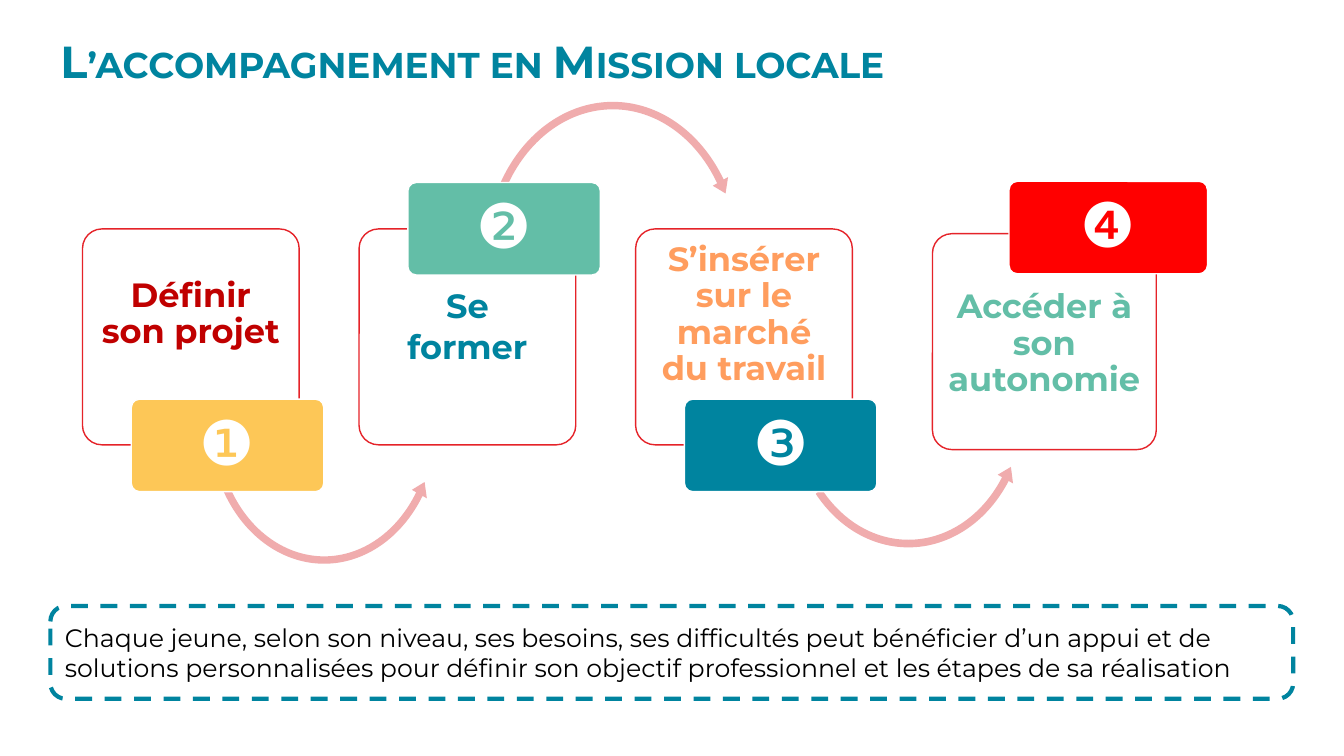
from dataclasses import dataclass

from pptx import Presentation
from pptx.dml.color import RGBColor
from pptx.enum.dml import MSO_LINE
from pptx.enum.shapes import MSO_SHAPE
from pptx.enum.text import MSO_ANCHOR, MSO_AUTO_SIZE, PP_ALIGN
from pptx.shapes.autoshape import Shape
from pptx.slide import Slide
from pptx.util import Cm, Pt

ROUNDED = MSO_SHAPE.ROUNDED_RECTANGLE
ARC_OVER = MSO_SHAPE.CIRCULAR_ARROW
ARC_UNDER = MSO_SHAPE.LEFT_CIRCULAR_ARROW
TOP, MIDDLE, BOTTOM = MSO_ANCHOR.TOP, MSO_ANCHOR.MIDDLE, MSO_ANCHOR.BOTTOM
LEFT, CENTER = PP_ALIGN.LEFT, PP_ALIGN.CENTER
DASH = MSO_LINE.DASH
NO_AUTOFIT = MSO_AUTO_SIZE.NONE

FONT = "Montserrat"
WHITE = RGBColor(0xFF, 0xFF, 0xFF)
BLACK = RGBColor(0x00, 0x00, 0x00)
TEAL = RGBColor(0x00, 0x84, 0x9F)
GREEN = RGBColor(0x63, 0xBE, 0xA7)
YELLOW = RGBColor(0xFD, 0xC7, 0x57)
ORANGE = RGBColor(0xFF, 0x9D, 0x5E)
RED = RGBColor(0xFF, 0x00, 0x00)
DARK_RED = RGBColor(0xC0, 0x00, 0x00)
CARD_BORDER = RGBColor(0xE5, 0x23, 0x29)
PINK = RGBColor(0xF0, 0xAC, 0xAD)

CARD_LEFT, CARD_TOP, CARD_STEP = 2.08, 5.77, 6.97
CARD_W, CARD_H = 5.46, 5.44
TILE_W, TILE_H, TILE_DX = 4.85, 2.33, 1.23
TILE_LOW, TILE_HIGH = 4.29, -1.17
CORNER = 0.09


@dataclass(frozen=True)
class Box:
    left: float
    top: float
    width: float
    height: float


@dataclass(frozen=True)
class Arc:
    kind: MSO_SHAPE
    box: Box
    adjustments: tuple[float, ...]


@dataclass(frozen=True)
class Step:
    number: str
    lines: tuple[str, ...]
    text_color: RGBColor
    text_top: float
    tile_color: RGBColor
    card: Box
    tile: Box
    arc: Arc | None = None


def card_box(column: int) -> Box:
    return Box(CARD_LEFT + column * CARD_STEP, CARD_TOP, CARD_W, CARD_H)


def tile_box(column: int, offset: float) -> Box:
    card = card_box(column)
    return Box(card.left + TILE_DX, card.top + offset, TILE_W, TILE_H)


STEPS = (
    Step("❶", ("Définir son projet",), DARK_RED, 1.1, YELLOW,
         card_box(0), tile_box(0, TILE_LOW),
         Arc(ARC_UNDER, Box(5.16, 7.09, 6.02, 7.24),
             (0.031, 3.83, 21.585, 90.245, 0.036))),
    Step("❷", ("Se", "former"), TEAL, 1.37, GREEN,
         card_box(1), tile_box(1, TILE_HIGH),
         Arc(ARC_OVER, Box(12.09, 2.44, 6.71, 8.1),
             (0.028, 3.404, 194.84, 125.755, 0.033))),
    Step("❸", ("S’insérer sur le marché du travail",), ORANGE, 0.2, TEAL,
         card_box(2), tile_box(2, TILE_LOW),
         Arc(ARC_UNDER, Box(19.81, 6.68, 6.17, 7.24),
             (0.031, 3.83, 21.585, 82.446, 0.036))),
    Step("❹", ("Accéder à son autonomie",), GREEN, 1.27, RED,
         Box(23.5, 5.89, 5.64, CARD_H), Box(25.43, 4.57, 5.0, TILE_H)),
)


def add_filled(slide: Slide, kind: MSO_SHAPE, box: Box, fill: RGBColor,
               line: RGBColor | None = None, weight: float = 1) -> Shape:
    sp = slide.shapes.add_shape(kind, Cm(box.left), Cm(box.top),
                                Cm(box.width), Cm(box.height))
    sp.shadow.inherit = False
    sp.fill.solid()
    sp.fill.fore_color.rgb = fill
    if line is None:
        sp.line.fill.background()
    else:
        sp.line.color.rgb = line
        sp.line.width = Pt(weight)
    return sp


def write(sp: Shape, lines: tuple[str, ...], size: float, color: RGBColor,
          bold: bool = False, align: PP_ALIGN = CENTER,
          anchor: MSO_ANCHOR = MIDDLE, spacing: float = 0.9) -> None:
    tf = sp.text_frame
    tf.word_wrap = True
    tf.auto_size = NO_AUTOFIT
    tf.vertical_anchor = anchor
    for i, line in enumerate(lines):
        p = tf.add_paragraph() if i else tf.paragraphs[0]
        p.text = line
        p.alignment = align
        p.line_spacing = spacing
        p.space_before = Pt(0)
        p.space_after = Pt(4 if i < len(lines) - 1 else 0)
        p.font.name = FONT
        p.font.size = Pt(size)
        p.font.bold = bold
        p.font.color.rgb = color


def add_title(slide: Slide) -> None:
    title = slide.shapes.title
    title.left, title.top = Cm(1.27), Cm(0.43)
    title.width, title.height = Cm(23.6), Cm(1.93)
    write(title, ("L’accompagnement en Mission locale",), 32, TEAL,
          bold=True, align=LEFT, anchor=BOTTOM)
    r = title.text_frame.paragraphs[0].runs[0]
    r._r.get_or_add_rPr().set("cap", "small")


def add_step(slide: Slide, step: Step) -> None:
    """Draw a card, the arc leaving it and its numbered tile on top."""
    card = add_filled(slide, ROUNDED, step.card, WHITE, CARD_BORDER)
    card.adjustments[0] = CORNER
    tf = card.text_frame
    tf.margin_left = tf.margin_right = tf.margin_bottom = Cm(0.2)
    tf.margin_top = Cm(step.text_top)
    write(card, step.lines, 24, step.text_color, bold=True, anchor=TOP)

    if step.arc:
        arrow = add_filled(slide, step.arc.kind, step.arc.box, PINK)
        for i, value in enumerate(step.arc.adjustments):
            arrow.adjustments[i] = value

    tile = add_filled(slide, ROUNDED, step.tile, step.tile_color, WHITE)
    tile.adjustments[0] = CORNER
    write(tile, (step.number,), 44, WHITE)


def add_summary(slide: Slide) -> None:
    sp = add_filled(slide, ROUNDED, Box(1.27, 15.27, 31.32, 2.34),
                    WHITE, TEAL, 3)
    sp.line.dash_style = DASH
    write(sp, ("Chaque jeune, selon son niveau, ses besoins, ses difficultés "
               "peut bénéficier d’un appui et de solutions personnalisées "
               "pour définir son objectif professionnel et les étapes de sa "
               "réalisation",), 18, BLACK, align=LEFT, spacing=1.0)


def main() -> None:
    prs = Presentation()
    prs.slide_width, prs.slide_height = Cm(33.87), Cm(19.05)
    slide = prs.slides.add_slide(prs.slide_layouts.get_by_name("Title Only"))
    add_title(slide)
    for step in STEPS:
        add_step(slide, step)
    add_summary(slide)
    prs.save("out.pptx")


if __name__ == "__main__":
    main()
